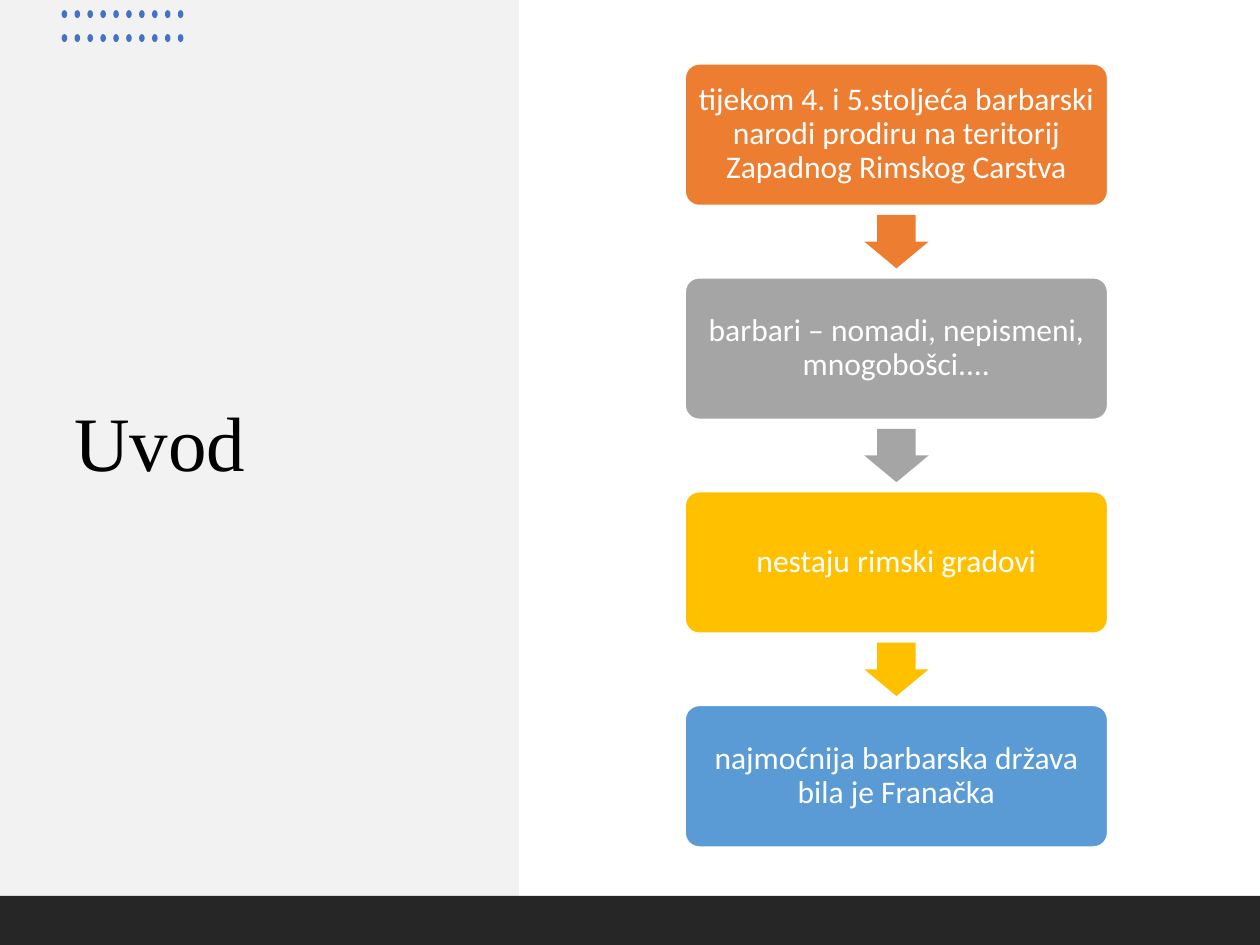
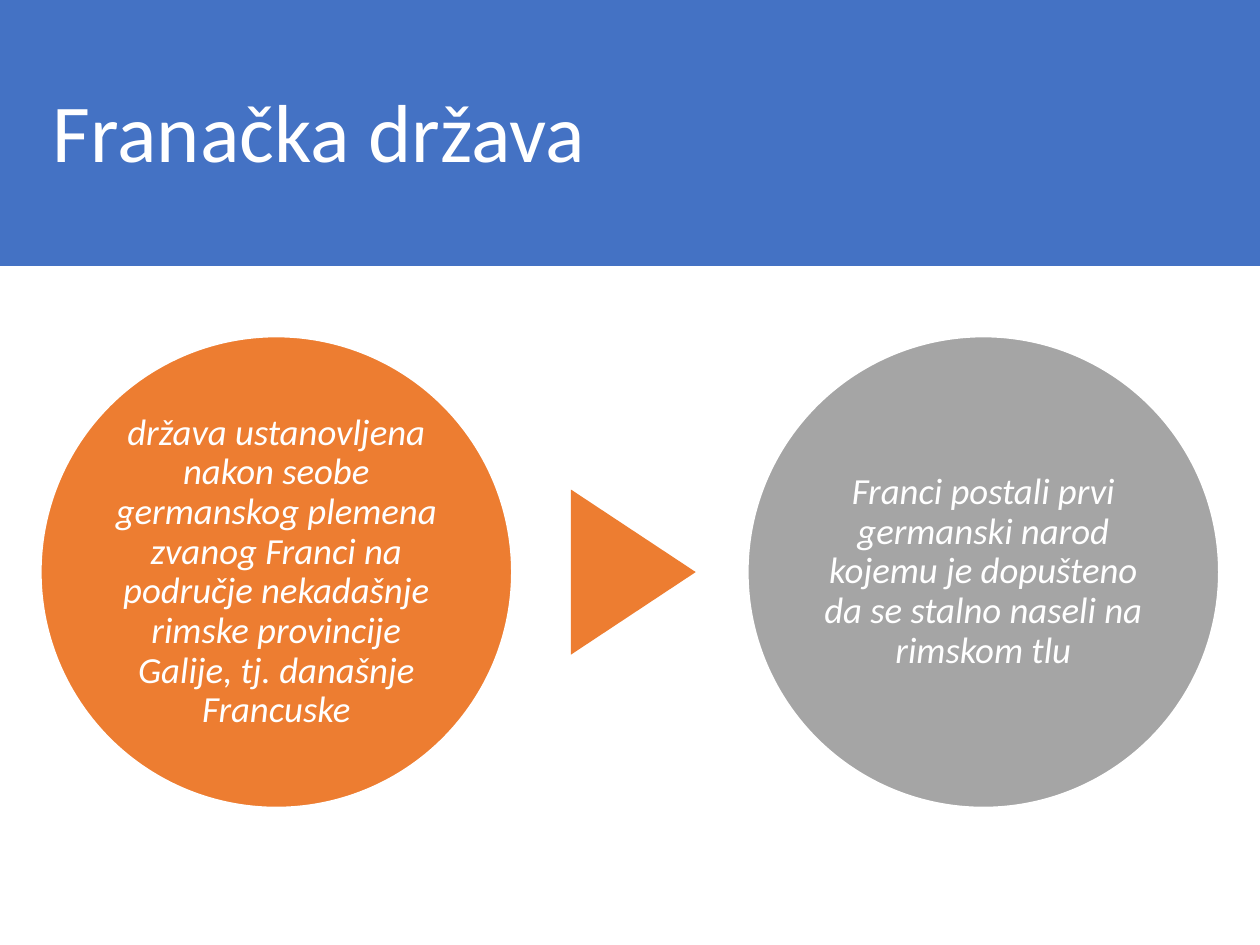
from dataclasses import dataclass

from pptx import Presentation
from pptx.dml.color import RGBColor
from pptx.enum.shapes import MSO_SHAPE
from pptx.enum.text import MSO_ANCHOR, MSO_AUTO_SIZE, PP_ALIGN
from pptx.util import Pt


@dataclass(frozen=True)
class Theme:
    """Colours, fonts and type sizes shared by the slides."""

    white: str = "FFFFFF"
    black: str = "000000"
    panel: str = "F2F2F2"
    footer: str = "262626"
    blue: str = "4472C4"
    orange: str = "ED7D31"
    gray: str = "A5A5A5"
    gold: str = "FFC000"
    sky: str = "5B9BD5"
    sans: str = "Calibri"
    serif: str = "Times New Roman"
    intro_title: int = 44
    band_title: int = 47
    step_text: int = 18
    circle_text: int = 21


THEME = Theme()
PAGE_WIDTH, PAGE_HEIGHT = 720, 540
TITLE_ONLY = 5


@dataclass(frozen=True)
class Box:
    """A rectangle in points."""

    left: float
    top: float
    width: float
    height: float

    def lengths(self):
        """Return the four lengths for python-pptx."""
        return Pt(self.left), Pt(self.top), Pt(self.width), Pt(self.height)


def add_filled(page, kind, box, fill, outline=None):
    """Add a flat preset shape with an optional thin outline."""
    shape = page.shapes.add_shape(kind, *box.lengths())
    shape.shadow.inherit = False
    shape.fill.solid()
    shape.fill.fore_color.rgb = RGBColor.from_string(fill)
    if outline:
        shape.line.color.rgb = RGBColor.from_string(outline)
        shape.line.width = Pt(1)
    else:
        shape.line.fill.background()
    return shape


def write_text(shape, text, size, color, font=THEME.sans, italic=False,
               align=PP_ALIGN.CENTER, inset=None):
    """Write one vertically centred paragraph into a shape."""
    frame = shape.text_frame
    frame.word_wrap = True
    frame.auto_size = MSO_AUTO_SIZE.NONE
    frame.vertical_anchor = MSO_ANCHOR.MIDDLE
    if inset is not None:
        frame.margin_left = frame.margin_right = Pt(inset)
        frame.margin_top = frame.margin_bottom = Pt(inset)
    para = frame.paragraphs[0]
    para.alignment = align
    para.line_spacing = 0.9
    span = para.add_run()
    span.text = text
    span.font.name = font
    span.font.size = Pt(size)
    span.font.italic = italic
    span.font.color.rgb = RGBColor.from_string(color)


def add_titled_page(deck, backdrop_box, backdrop_fill, title_box, text, **style):
    """Add a page whose title stands on a coloured backdrop."""
    page = deck.slides.add_slide(deck.slide_layouts[TITLE_ONLY])
    title = page.shapes.title
    backdrop = add_filled(page, MSO_SHAPE.RECTANGLE, backdrop_box, backdrop_fill)
    title.element.addprevious(backdrop.element)
    title.left, title.top, title.width, title.height = title_box.lengths()
    write_text(title, text, align=PP_ALIGN.LEFT, **style)
    return page


def add_dot_grid(page, box, columns=10, rows=2):
    """Spread small dots evenly from edge to edge of the box."""
    dot_width, dot_height = 3.2, 4.5
    column_step = (box.width - dot_width) / (columns - 1)
    row_step = (box.height - dot_height) / (rows - 1)
    for row in range(rows):
        for column in range(columns):
            dot = Box(box.left + column * column_step, box.top + row * row_step,
                      dot_width, dot_height)
            add_filled(page, MSO_SHAPE.OVAL, dot, THEME.blue)


def add_step_flow(page, box, steps):
    """Stack rounded steps down the box with an arrow in each gap."""
    step_height, arrow_width, arrow_height = 81, 36.7, 30.5
    pitch = (box.height - step_height) / (len(steps) - 1)
    gap = pitch - step_height
    for index, (text, fill) in enumerate(steps):
        top = box.top + index * pitch
        step = add_filled(page, MSO_SHAPE.ROUNDED_RECTANGLE,
                          Box(box.left, top, box.width, step_height), fill, THEME.white)
        step.adjustments[0] = 0.1
        write_text(step, text, THEME.step_text, THEME.white, inset=5)
        if index < len(steps) - 1:
            arrow = add_filled(page, MSO_SHAPE.DOWN_ARROW,
                               Box(box.left + (box.width - arrow_width) / 2,
                                   top + step_height + (gap - arrow_height) / 2,
                                   arrow_width, arrow_height), fill)
            arrow.adjustments[0] = 0.6
            arrow.adjustments[1] = 0.5


def add_circle_pair(page, box, circles):
    """Place two circles at the ends of the box and a pointer between them."""
    diameter = box.height
    pointer_base, pointer_length, pointer_shift = 94.3, 71.3, 2
    (first_text, first_fill), (second_text, second_fill) = circles
    pointer = Box(box.left + (box.width - pointer_base) / 2 + pointer_shift,
                  box.top + (diameter - pointer_length) / 2,
                  pointer_base, pointer_length)
    add_filled(page, MSO_SHAPE.ISOSCELES_TRIANGLE, pointer, first_fill).rotation = 90
    for left, text, fill in (
        (box.left, first_text, first_fill),
        (box.left + box.width - diameter, second_text, second_fill),
    ):
        circle = add_filled(page, MSO_SHAPE.OVAL,
                            Box(left, box.top, diameter, diameter), fill, THEME.white)
        write_text(circle, text, THEME.circle_text, THEME.white, italic=True, inset=2)


def build_intro(deck):
    """Build the introduction with its side panel and step flow."""
    footer_top = 512
    page = add_titled_page(
        deck, Box(0, 0, 296.5, footer_top), THEME.panel, Box(35.3, 95, 229, 320.4),
        "Uvod", size=THEME.intro_title, color=THEME.black, font=THEME.serif)
    add_dot_grid(page, Box(35.2, 5.8, 69.6, 18.2))
    add_filled(page, MSO_SHAPE.RECTANGLE,
               Box(0, footer_top, PAGE_WIDTH, PAGE_HEIGHT - footer_top), THEME.footer)
    add_step_flow(page, Box(391.5, 36.5, 241.5, 447.6), [
        ("tijekom 4. i 5.stoljeća barbarski narodi prodiru na teritorij "
         "Zapadnog Rimskog Carstva", THEME.orange),
        ("barbari – nomadi, nepismeni, mnogobošci....", THEME.gray),
        ("nestaju rimski gradovi", THEME.gold),
        ("najmoćnija barbarska država bila je Franačka", THEME.sky),
    ])


def build_frankish_state(deck):
    """Build the Frankish state slide with its title band and circles."""
    page = add_titled_page(
        deck, Box(0, 0, PAGE_WIDTH, 152), THEME.blue, Box(23, 25.2, 674, 104.4),
        "Franačka država", size=THEME.band_title, color=THEME.white)
    add_circle_pair(page, Box(23.3, 192.3, 673.2, 269.2), [
        ("država ustanovljena nakon seobe germanskog plemena zvanog Franci na "
         "područje nekadašnje rimske provincije Galije, tj. današnje Francuske",
         THEME.orange),
        ("Franci postali prvi germanski narod kojemu je dopušteno da se stalno "
         "naseli na rimskom tlu", THEME.gray),
    ])


def main():
    """Build and save the deck."""
    deck = Presentation()
    deck.slide_width, deck.slide_height = Pt(PAGE_WIDTH), Pt(PAGE_HEIGHT)
    build_intro(deck)
    build_frankish_state(deck)
    deck.save("out.pptx")


if __name__ == "__main__":
    main()
